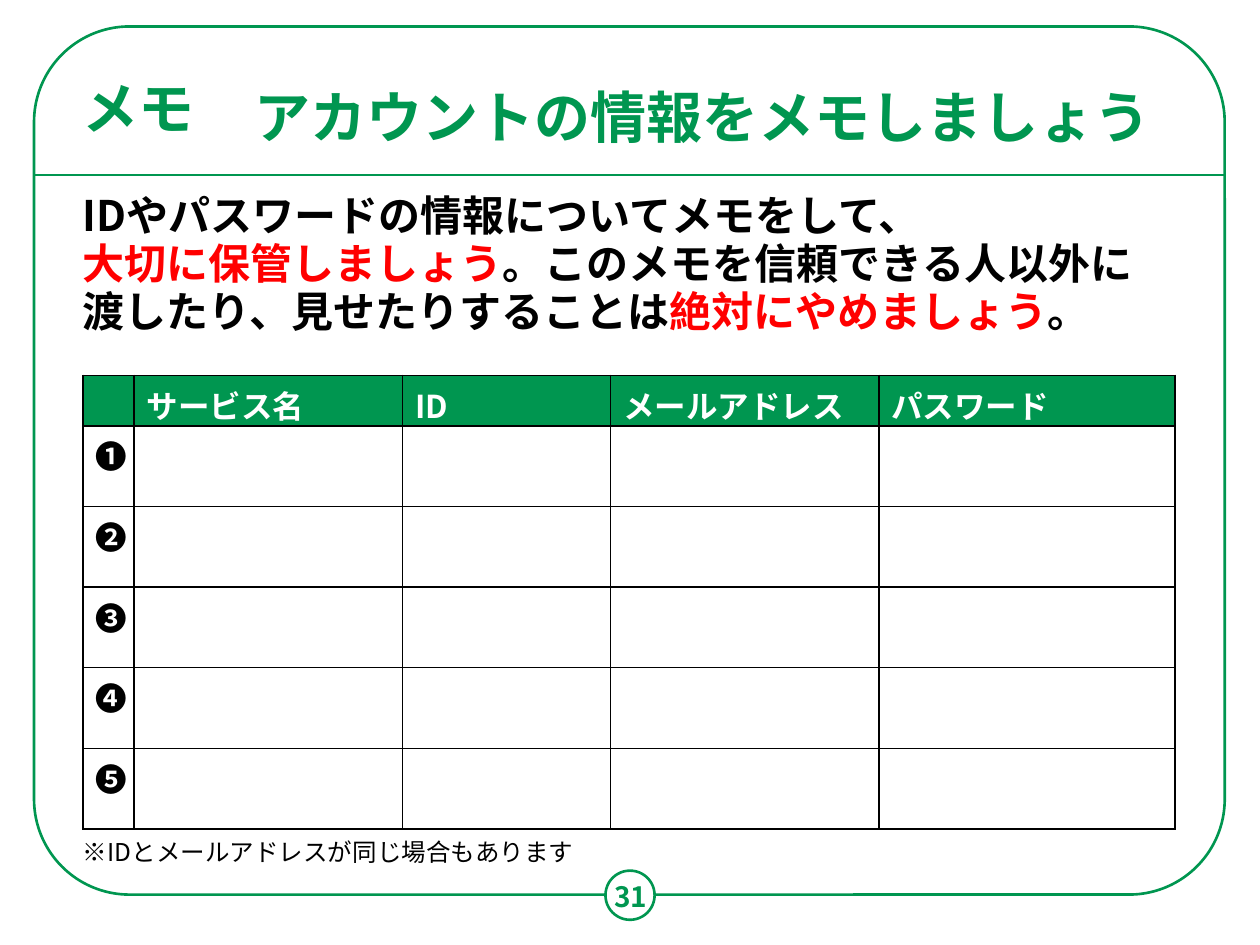
from dataclasses import dataclass
from lxml.etree import SubElement
from pptx import Presentation
from pptx.dml.color import RGBColor
from pptx.enum.shapes import MSO_CONNECTOR, MSO_SHAPE
from pptx.enum.text import MSO_ANCHOR, PP_ALIGN
from pptx.oxml.ns import qn
from pptx.util import Inches, Pt


@dataclass(frozen=True)
class Theme:
    font: str = "Noto Sans CJK JP"
    green: str = "009650"
    red: str = "FF0000"
    black: str = "000000"
    white: str = "FFFFFF"
    title: int = 32
    body: int = 24
    cell: int = 18
    page: int = 16
    note: int = 14
    line: float = 1.5
    rule: float = 1


THEME = Theme()
WIDE, HIGH = Inches(10), Inches(7.5)
COLS, ROWS = 100, 75
HEADS = ["", "サービス名", "ID", "メールアドレス", "パスワード"]
MARKS = "❶❷❸❹❺"
WIDTHS = [4.05, 21.3, 16.5, 21.3, 23.5]
BODY = [
    [("IDやパスワードの情報についてメモをして、", THEME.black)],
    [("大切に保管しましょう", THEME.red),
     ("。このメモを信頼できる人以外に", THEME.black)],
    [("渡したり、見せたりすることは", THEME.black),
     ("絶対にやめましょう", THEME.red), ("。", THEME.black)],
]


def across(n):
    return int(WIDE * n / COLS)


def down(n):
    return int(HIGH * n / ROWS)


def place(x, y, w, h):
    return across(x), down(y), across(w), down(h)


def apply(item, style):
    for name, value in style.items():
        setattr(item, name, value)


def write(para, text, color, size, bold=True):
    run = para.add_run()
    run.text = text
    apply(run.font, {"name": THEME.font, "size": Pt(size), "bold": bold})
    run.font.color.rgb = RGBColor.from_string(color)
    SubElement(run.font._element, qn("a:ea"), typeface=THEME.font)


def stroke(line):
    line.color.rgb = RGBColor.from_string(THEME.green)
    line.width = Pt(THEME.line)


def outline(slide, kind, area, fill=None):
    shape = slide.shapes.add_shape(kind, *place(*area))
    shape.shadow.inherit = False
    if fill:
        shape.fill.solid()
        shape.fill.fore_color.rgb = RGBColor.from_string(fill)
    else:
        shape.fill.background()
    stroke(shape.line)
    return shape


def divide(slide, left, right, y):
    line = slide.shapes.add_connector(
        MSO_CONNECTOR.STRAIGHT, across(left), down(y), across(right), down(y))
    stroke(line.line)
    SubElement(line._element.spPr, qn("a:effectLst"))


def label(slide, area, lines, size, bold=True, frame=None, style=None, gap=0):
    box = slide.shapes.add_textbox(*place(*area)).text_frame
    apply(box, {"word_wrap": True, **(frame or {})})
    for i, parts in enumerate(lines):
        para = box.add_paragraph() if i else box.paragraphs[0]
        apply(para, style or {})
        if i and gap:
            para.space_before = Pt(gap)
        for text, color in parts:
            write(para, text, color, size, bold)


def border(cell):
    props = cell._tc.get_or_add_tcPr()
    for side in ("lnL", "lnR", "lnT", "lnB"):
        edge = SubElement(props, qn("a:" + side), w=str(Pt(THEME.rule)))
        fill = SubElement(edge, qn("a:solidFill"))
        SubElement(fill, qn("a:srgbClr"), val=THEME.black)


def grid(slide, x, y, head, row):
    data = [HEADS] + [[mark] + [""] * (len(HEADS) - 1) for mark in MARKS]
    area = place(x, y, sum(WIDTHS), head + row * len(MARKS))
    table = slide.shapes.add_table(len(data), len(HEADS), *area).table
    for col, width in zip(table.columns, WIDTHS):
        col.width = across(width)
    for r, texts in enumerate(data):
        table.rows[r].height = down(row if r else head)
        for c, text in enumerate(texts):
            cell = table.cell(r, c)
            border(cell)
            if r:
                cell.fill.background()
            else:
                cell.fill.solid()
                cell.fill.fore_color.rgb = RGBColor.from_string(THEME.green)
            if text:
                color = THEME.black if r else THEME.white
                write(cell.text_frame.paragraphs[0], text, color, THEME.cell)


def main():
    deck = Presentation()
    apply(deck, {"slide_width": WIDE, "slide_height": HIGH})
    slide = deck.slides.add_slide(deck.slide_layouts[6])
    low = {"vertical_anchor": MSO_ANCHOR.BOTTOM}
    mid = {"vertical_anchor": MSO_ANCHOR.MIDDLE}

    card = outline(slide, MSO_SHAPE.ROUNDED_RECTANGLE, (2.7, 2.1, 94.5, 68.9))
    card.adjustments[0] = 0.11
    outline(slide, MSO_SHAPE.OVAL, (48.05, 69.1, 3.9, 3.9), THEME.white)
    divide(slide, 2.7, 97.2, 13.9)
    label(slide, (46.1, 69.2, 7.9, 3.9), [[("31", THEME.green)]], THEME.page,
          frame=mid, style={"alignment": PP_ALIGN.CENTER})
    label(slide, (19.2, 3, 73.8, 9.4),
          [[("アカウントの情報をメモしましょう", THEME.green)]],
          THEME.title, frame=low)
    label(slide, (5.6, 5.8, 13.8, 5.9), [[("メモ", THEME.green)]],
          THEME.title, frame=low, style={"line_spacing": 0.9})
    label(slide, (5.6, 15.7, 91.7, 11.8), BODY, THEME.body,
          style={"line_spacing": 0.68}, gap=8)
    grid(slide, 6.6, 29.8, 3.7, 6.4)
    label(slide, (5.6, 65.9, 87.4, 3.4),
          [[("※IDとメールアドレスが同じ場合もあります", THEME.black)]],
          THEME.note, bold=False)
    deck.save("out.pptx")


if __name__ == "__main__":
    main()
